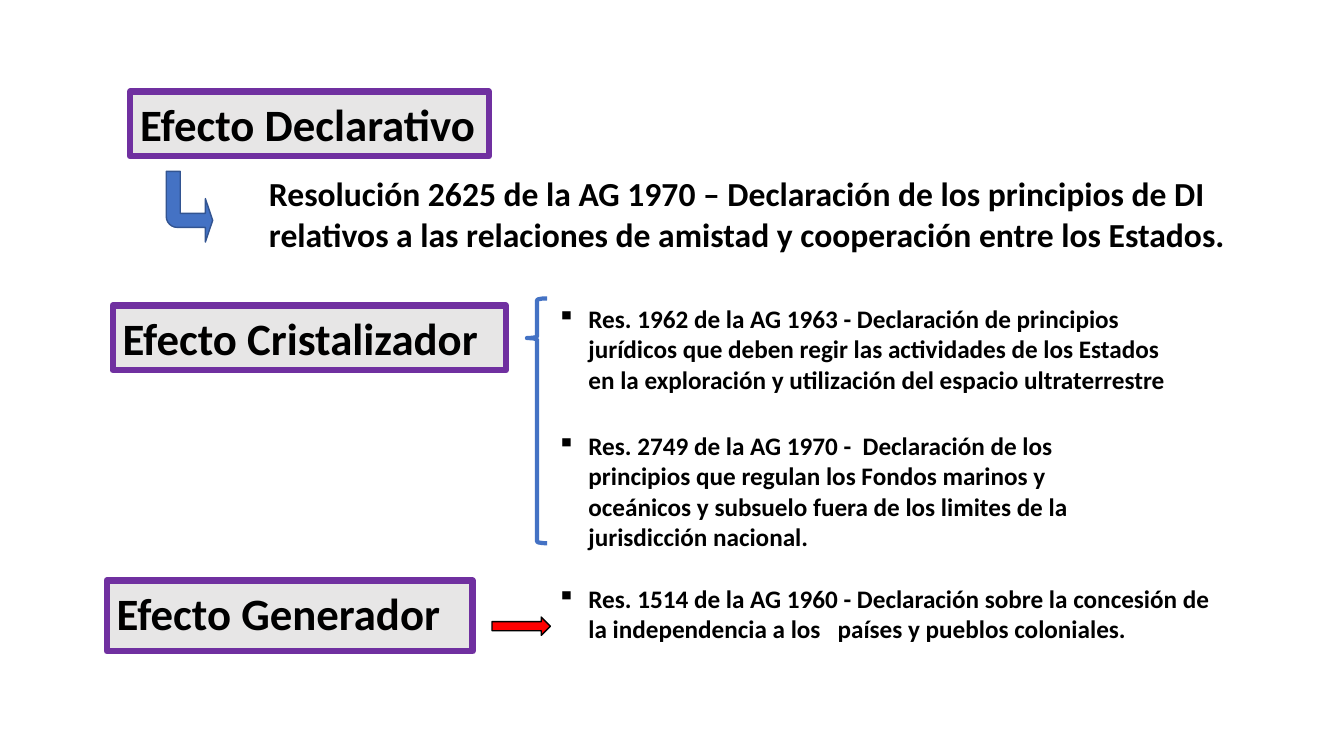
from dataclasses import dataclass

from lxml.etree import SubElement
from pptx import Presentation
from pptx.dml.color import RGBColor
from pptx.enum.shapes import MSO_SHAPE
from pptx.enum.text import MSO_ANCHOR, PP_ALIGN
from pptx.oxml.ns import qn
from pptx.util import Cm, Pt


@dataclass(frozen=True)
class Theme:
    font: str = "Calibri"
    text: str = "000000"
    box_fill: str = "E7E6E6"
    box_line: str = "7030A0"
    blue: str = "4472C4"
    dark_blue: str = "325491"
    red: str = "FF0000"
    heading_size: int = 32
    statement_size: int = 24
    bullet_size: int = 18


THEME = Theme()
BULLET_LEFT = 13.79
BULLET_INDENT = 0.79


def write_text(shape, text, *, size, wrap=True, bullet=None):
    frame = shape.text_frame
    frame.word_wrap = wrap
    frame.vertical_anchor = MSO_ANCHOR.TOP
    frame.text = text
    for paragraph in frame.paragraphs:
        paragraph.alignment = PP_ALIGN.LEFT
        font = paragraph.font
        font.name = THEME.font
        font.size = Pt(size)
        font.bold = True
        font.color.rgb = RGBColor.from_string(THEME.text)
        for run in paragraph.runs:
            run.font.name = THEME.font
            run.font.size = Pt(size)
            run.font.bold = True
            run.font.color.rgb = RGBColor.from_string(THEME.text)
        if bullet:
            add_bullet(paragraph, bullet)


def add_bullet(paragraph, symbol):
    properties = paragraph._p.get_or_add_pPr()
    properties.set("marL", str(Cm(BULLET_INDENT)))
    properties.set("indent", str(-Cm(BULLET_INDENT)))
    character = SubElement(properties, qn("a:buChar"))
    character.set("char", symbol)
    default_format = properties.find(qn("a:defRPr"))
    if default_format is not None:
        properties.append(default_format)


def add_outlined_shape(slide, kind, place, *, line, line_width, fill=None, adjustments=()):
    shape = slide.shapes.add_shape(kind, *map(Cm, place))
    shape.shadow.inherit = False
    if fill:
        shape.fill.solid()
        shape.fill.fore_color.rgb = RGBColor.from_string(fill)
    else:
        shape.fill.background()
    shape.line.color.rgb = RGBColor.from_string(line)
    shape.line.width = Pt(line_width)
    for index, value in enumerate(adjustments):
        shape.adjustments[index] = value
    return shape


def add_heading(slide, text, place, wrap=True):
    box = add_outlined_shape(slide, MSO_SHAPE.RECTANGLE, place, fill=THEME.box_fill,
                             line=THEME.box_line, line_width=4.5)
    write_text(box, text, size=THEME.heading_size, wrap=wrap)


def add_statement(slide, text, place):
    box = slide.shapes.add_textbox(*map(Cm, place))
    write_text(box, text, size=THEME.statement_size, wrap=False)


def add_resolution(slide, text, top, width, height):
    box = slide.shapes.add_textbox(Cm(BULLET_LEFT), Cm(top), Cm(width), Cm(height))
    write_text(box, text, size=THEME.bullet_size, bullet="▪")


def add_turning_arrow(slide, place):
    arrow = add_outlined_shape(slide, MSO_SHAPE.BENT_ARROW, place, fill=THEME.blue,
                               line=THEME.dark_blue, line_width=1,
                               adjustments=(0.303, 0.468, 0.156, 0.238))
    arrow.rotation = 180
    arrow._element.spPr.xfrm.set("flipH", "1")


def main():
    presentation = Presentation()
    presentation.slide_width = Cm(33.87)
    presentation.slide_height = Cm(19.05)
    slide = presentation.slides.add_slide(presentation.slide_layouts[6])

    add_heading(slide, "Efecto Declarativo", (3.28, 2.31, 9.04, 1.63), wrap=False)
    add_statement(
        slide,
        "Resolución 2625 de la AG 1970 – Declaración de los principios de DI\n"
        "relativos a las relaciones de amistad y cooperación entre los Estados.",
        (6.53, 4.24, 24.71, 2.29),
    )
    add_turning_arrow(slide, (4.19, 4.32, 1.17, 1.78))

    add_heading(slide, "Efecto Cristalizador", (2.84, 7.7, 9.91, 1.63))
    add_outlined_shape(slide, MSO_SHAPE.LEFT_BRACE, (13.28, 7.52, 0.51, 6.17),
                       line=THEME.blue, line_width=3, adjustments=(0.083, 0.162))
    add_resolution(
        slide,
        "Res. 1962 de la AG 1963 - Declaración de principios jurídicos que deben regir "
        "las actividades de los Estados en la exploración y utilización del espacio "
        "ultraterrestre",
        top=7.52, width=16.05, height=3.3,
    )
    add_resolution(
        slide,
        "Res. 2749 de la AG 1970 -  Declaración de los principios que regulan los Fondos "
        "marinos y oceánicos y subsuelo fuera de los limites de la jurisdicción nacional.",
        top=10.72, width=15.01, height=3.3,
    )

    add_heading(slide, "Efecto Generador", (2.69, 14.63, 9.22, 1.78))
    add_outlined_shape(slide, MSO_SHAPE.RIGHT_ARROW, (12.4, 15.55, 1.47, 0.46),
                       fill=THEME.red, line=THEME.text, line_width=1)
    add_resolution(
        slide,
        "Res. 1514 de la AG 1960 - Declaración sobre la concesión de la independencia a "
        "los   países y pueblos coloniales.",
        top=14.58, width=17.09, height=1.78,
    )

    presentation.save("out.pptx")


if __name__ == "__main__":
    main()
